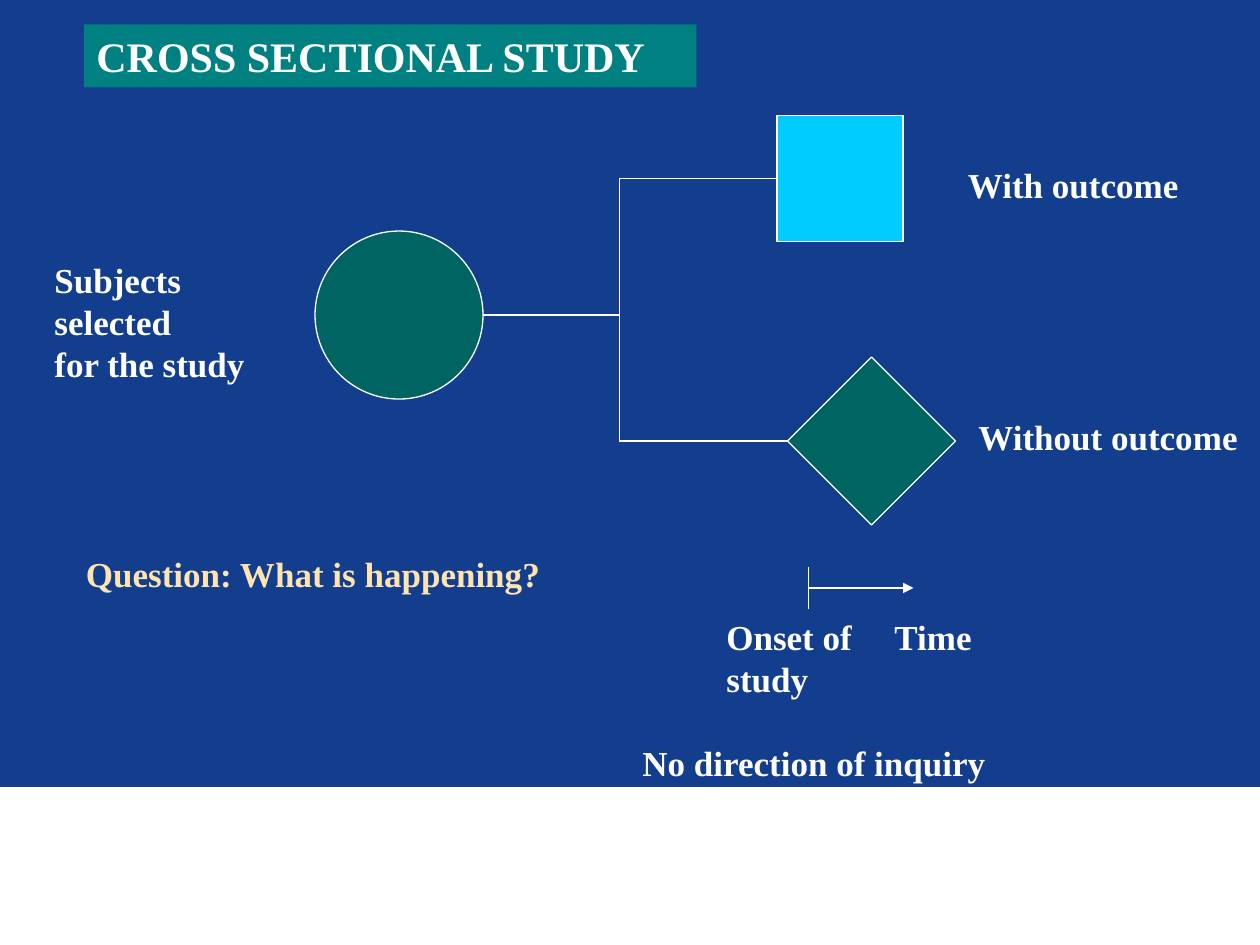
from lxml.etree import SubElement
from pptx import Presentation
from pptx.dml.color import RGBColor
from pptx.enum.shapes import MSO_CONNECTOR, MSO_SHAPE
from pptx.enum.text import MSO_ANCHOR, PP_ALIGN
from pptx.oxml.ns import qn
from pptx.util import Pt

THEME = {
    "background": "133D8D", "white": "FFFFFF", "teal": "006462", "cyan": "00CCFF",
    "banner": "008080", "cream": "FFE4AF",
    "font": "Times New Roman", "title_size": 24, "label_size": 20, "line": 0.75,
}

TITLE = ("CROSS SECTIONAL STUDY", (48, 14, 350, 36))
FOOTER_BAND = (0, 450, 720, 90)
SUBJECTS = (180, 132, 96, 96)
WITH_OUTCOME = (444, 66, 72, 72)
WITHOUT_OUTCOME = (450, 204, 96, 96)
FORK_X = 354
ONSET_X, TIME_END_X, TIME_Y, TICK_HALF = 462, 522, 336, 12

LABELS = [
    (["Subjects selected", "for the study"], (24, 144, 148, 79), "white"),
    (["With outcome"], (546, 90, 135, 31), "white"),
    (["Without outcome"], (552, 234, 168, 31), "white"),
    (["Onset of study"], (408, 348, 96, 55), "white"),
    (["Time"], (504, 348, 60, 31), "white"),
    (["No direction of inquiry"], (360, 420, 234, 31), "white"),
    (["Question: What is happening?"], (42, 312, 300, 31), "cream"),
]


def color(name):
    """Return the theme colour of that name."""
    return RGBColor.from_string(THEME[name])


def set_attributes(target, values):
    """Set each named attribute on the target."""
    for name, value in values.items():
        setattr(target, name, value)


def write(shape, paragraphs, size, ink):
    """Fill a shape with left-aligned bold paragraphs."""
    frame = shape.text_frame
    set_attributes(frame, {"word_wrap": True, "vertical_anchor": MSO_ANCHOR.TOP})
    frame.text = "\n".join(paragraphs)
    for paragraph in frame.paragraphs:
        paragraph.alignment = PP_ALIGN.LEFT
        set_attributes(paragraph.font, {"name": THEME["font"], "size": Pt(THEME[size]), "bold": True})
        paragraph.font.color.rgb = color(ink)


def add_figure(slide, kind, box, fill, outlined=True):
    """Add a filled preset shape, outlined in white unless told otherwise."""
    figure = slide.shapes.add_shape(kind, *map(Pt, box))
    figure.shadow.inherit = False
    figure.fill.solid()
    figure.fill.fore_color.rgb = color(fill)
    if outlined:
        figure.line.color.rgb = color("white")
        figure.line.width = Pt(THEME["line"])
    else:
        figure.line.fill.background()
    return figure


def add_line(slide, start, end, target=None, arrow=False):
    """Add a white line, joined to the left side of a target if there is one."""
    line = slide.shapes.add_connector(MSO_CONNECTOR.STRAIGHT, *map(Pt, start + end))
    line.line.color.rgb = color("white")
    line.line.width = Pt(THEME["line"])
    if target is not None:
        line.end_connect(target, 1)
    if arrow:
        SubElement(line.line._get_or_add_ln(), qn("a:tailEnd"), type="triangle")
    SubElement(line._element.spPr, qn("a:effectLst"))


def middle(box):
    """Return the height of a box's centre."""
    return box[1] + box[3] / 2


def main():
    """Build the cross sectional study slide."""
    deck = Presentation()
    set_attributes(deck, {"slide_width": Pt(720), "slide_height": Pt(540)})
    slide = deck.slides.add_slide(deck.slide_layouts[6])
    slide.background.fill.solid()
    slide.background.fill.fore_color.rgb = color("background")

    add_figure(slide, MSO_SHAPE.RECTANGLE, FOOTER_BAND, "white")
    add_figure(slide, MSO_SHAPE.OVAL, SUBJECTS, "teal")
    outcomes = [
        (MSO_SHAPE.RECTANGLE, WITH_OUTCOME, "cyan"),
        (MSO_SHAPE.DIAMOND, WITHOUT_OUTCOME, "teal"),
    ]
    for kind, box, fill in outcomes:
        outcome = add_figure(slide, kind, box, fill)
        add_line(slide, (FORK_X, middle(box)), (box[0], middle(box)), outcome)
    add_line(slide, (FORK_X, middle(WITH_OUTCOME)), (FORK_X, middle(WITHOUT_OUTCOME)))
    add_line(slide, (SUBJECTS[0] + SUBJECTS[2], middle(SUBJECTS)), (FORK_X, middle(SUBJECTS)))

    add_line(slide, (ONSET_X, TIME_Y), (TIME_END_X, TIME_Y), arrow=True)
    add_line(slide, (ONSET_X, TIME_Y - TICK_HALF), (ONSET_X, TIME_Y + TICK_HALF))

    for paragraphs, box, ink in LABELS:
        label = slide.shapes.add_textbox(*map(Pt, box))
        write(label, paragraphs, "label_size", ink)

    heading, banner_box = TITLE
    banner = add_figure(slide, MSO_SHAPE.RECTANGLE, banner_box, "banner", outlined=False)
    write(banner, [heading], "title_size", "white")
    deck.save("out.pptx")


if __name__ == "__main__":
    main()
